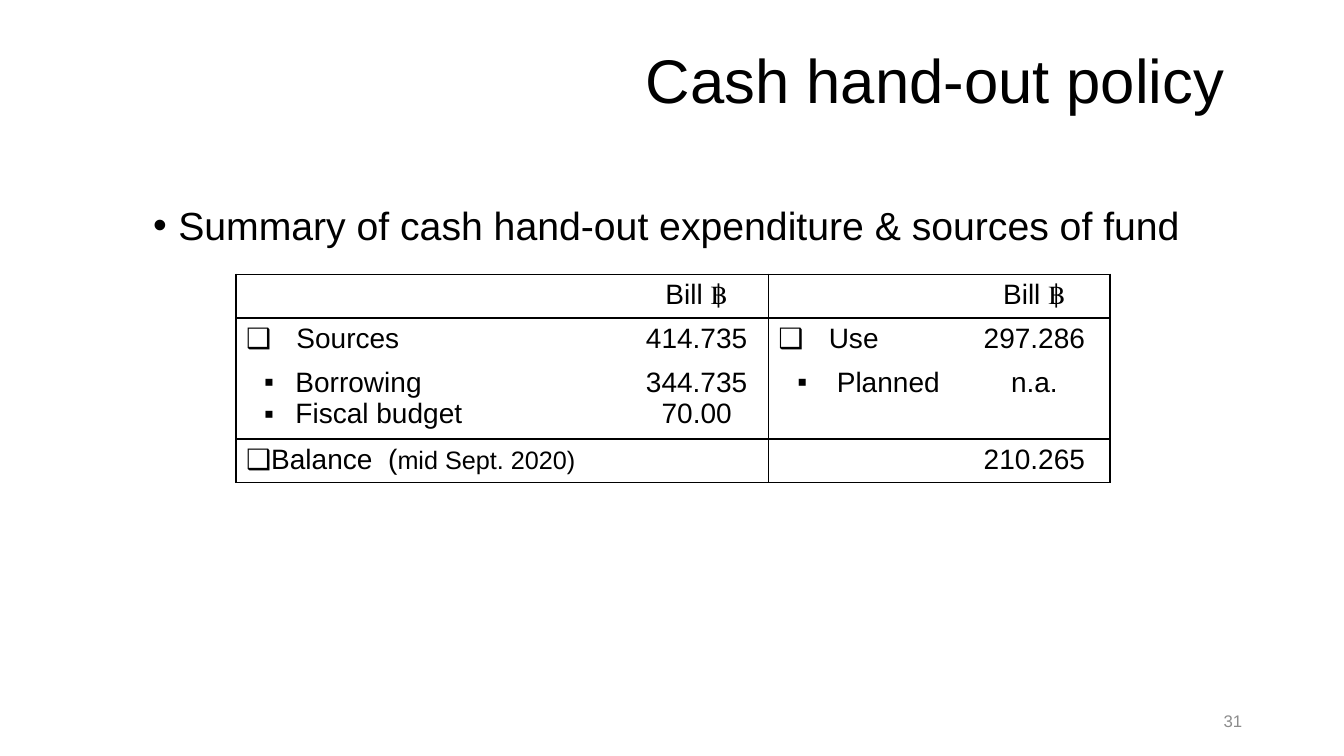
from pptx import Presentation
from pptx.dml.color import RGBColor
from pptx.enum.text import MSO_ANCHOR as Anchor, PP_ALIGN as Align
from pptx.oxml.ns import qn
from pptx.util import Inches, Pt
from lxml.etree import SubElement

BLACK = RGBColor(0x00, 0x00, 0x00)
GREY = RGBColor(0x8C, 0x8C, 0x8C)
FONT = "Arial"

COLUMN_WIDTHS = (3.86, 1.42, 1.89, 1.5)
ROW_HEIGHTS = (0.41, 0.41, 0.73, 0.41)
RULED_ROWS = (0, 1, 3, 4)  # horizontal rules, counted from the table top
RULED_COLUMNS = (0, 2, 4)  # vertical rules, counted from the table left

# Bullet, left margin and hanging indent of each kind of entry
ITEM = ("❑", 0.5, 0.5)
SOURCE = ("▪", 0.49, 0.31)
USE = ("▪", 0.58, 0.39)
BALANCE = ("❑", 0.19, 0.19)

# Each cell: its lines, and its bullet (None for centred figures)
FUNDS = (
    (("", None), ("Bill ฿", None), ("", None), ("Bill ฿", None)),
    (("Sources", ITEM), ("414.735", None), ("Use", ITEM), ("297.286", None)),
    (("Borrowing\nFiscal budget", SOURCE), ("344.735\n70.00", None),
     ("Planned", USE), ("n.a.", None)),
    (("Balance  (", BALANCE), ("", None), ("", None), ("210.265", None)),
)


def add_bullet(paragraph, char, margin, hanging):
    props = paragraph._p.get_or_add_pPr()
    props.set("marL", str(Inches(margin)))
    props.set("indent", str(-Inches(hanging)))
    SubElement(props, qn("a:buFont"), typeface=FONT)
    SubElement(props, qn("a:buChar"), char=char)


def style_runs(paragraph, size, color=BLACK):
    for run in paragraph.runs:
        run.font.name = FONT
        run.font.size = Pt(size)
        run.font.color.rgb = color


def add_text(slide, text, left, top, width, height):
    box = slide.shapes.add_textbox(
        Inches(left), Inches(top), Inches(width), Inches(height))
    box.text_frame.word_wrap = True
    box.text_frame.text = text
    return box.text_frame


def set_title(slide, left, top, width, height):
    title = slide.shapes.title
    title.left, title.top = Inches(left), Inches(top)
    title.width, title.height = Inches(width), Inches(height)
    frame = title.text_frame
    frame.text = "Cash hand-out policy"
    frame.vertical_anchor = Anchor.TOP
    frame.margin_top = Inches(0.1)
    frame.margin_right = Inches(0.27)
    heading = frame.paragraphs[0]
    heading.alignment = Align.RIGHT
    heading.line_spacing = 0.9
    style_runs(heading, 44)


def add_summary(slide, left, top, width, height):
    frame = add_text(
        slide, "Summary of cash hand-out expenditure & sources of fund",
        left, top, width, height)
    summary = frame.paragraphs[0]
    summary.line_spacing = 0.9
    add_bullet(summary, "•", 0.75, 0.25)
    style_runs(summary, 28)


def set_borders(cell, row, column):
    props = cell._tc.get_or_add_tcPr()
    sides = (("a:lnL", column in RULED_COLUMNS),
             ("a:lnR", column + 1 in RULED_COLUMNS),
             ("a:lnT", row in RULED_ROWS),
             ("a:lnB", row + 1 in RULED_ROWS))
    for tag, ruled in sides:
        line = SubElement(props, qn(tag), w=str(Pt(1)))
        if ruled:
            fill = SubElement(line, qn("a:solidFill"))
            SubElement(fill, qn("a:srgbClr"), val=str(BLACK))
        else:
            SubElement(line, qn("a:noFill"))


def fill_cell(cell, text, bullet):
    cell.text_frame.text = text
    for paragraph in cell.text_frame.paragraphs:
        if bullet:
            add_bullet(paragraph, *bullet)
        else:
            paragraph.alignment = Align.CENTER
        style_runs(paragraph, 20)
        paragraph.font.size = Pt(20)


def add_funds_table(slide, left, top):
    funds = slide.shapes.add_table(
        len(ROW_HEIGHTS), len(COLUMN_WIDTHS), Inches(left), Inches(top),
        Inches(sum(COLUMN_WIDTHS)), Inches(sum(ROW_HEIGHTS))).table
    funds.first_row = funds.horz_banding = False
    for column, width in zip(funds.columns, COLUMN_WIDTHS):
        column.width = Inches(width)
    for row, height in zip(funds.rows, ROW_HEIGHTS):
        row.height = Inches(height)
    for r, entries in enumerate(FUNDS):
        for c, (text, bullet) in enumerate(entries):
            cell = funds.cell(r, c)
            fill_cell(cell, text, bullet)
            set_borders(cell, r, c)
            cell.fill.background()

    # Smaller date after the balance label
    balance = funds.cell(3, 0).text_frame.paragraphs[0]
    date = balance.add_run()
    date.text = "mid Sept. 2020)"
    style_runs(balance, 20)
    date.font.size = Pt(18)


def add_page_number(slide, left, top, width, height):
    frame = add_text(slide, "31", left, top, width, height)
    frame.vertical_anchor = Anchor.MIDDLE
    number = frame.paragraphs[0]
    number.alignment = Align.RIGHT
    style_runs(number, 12, GREY)


def main():
    deck = Presentation()
    deck.slide_width, deck.slide_height = Inches(13.33), Inches(7.5)
    slide = deck.slides.add_slide(deck.slide_layouts[5])
    set_title(slide, 0.92, 0.4, 11.5, 1.45)
    add_summary(slide, 0.92, 2, 11.5, 0.6)
    add_funds_table(slide, 2.34, 2.72)
    add_page_number(slide, 9.42, 6.95, 3, 0.4)
    deck.save("out.pptx")


if __name__ == "__main__":
    main()
